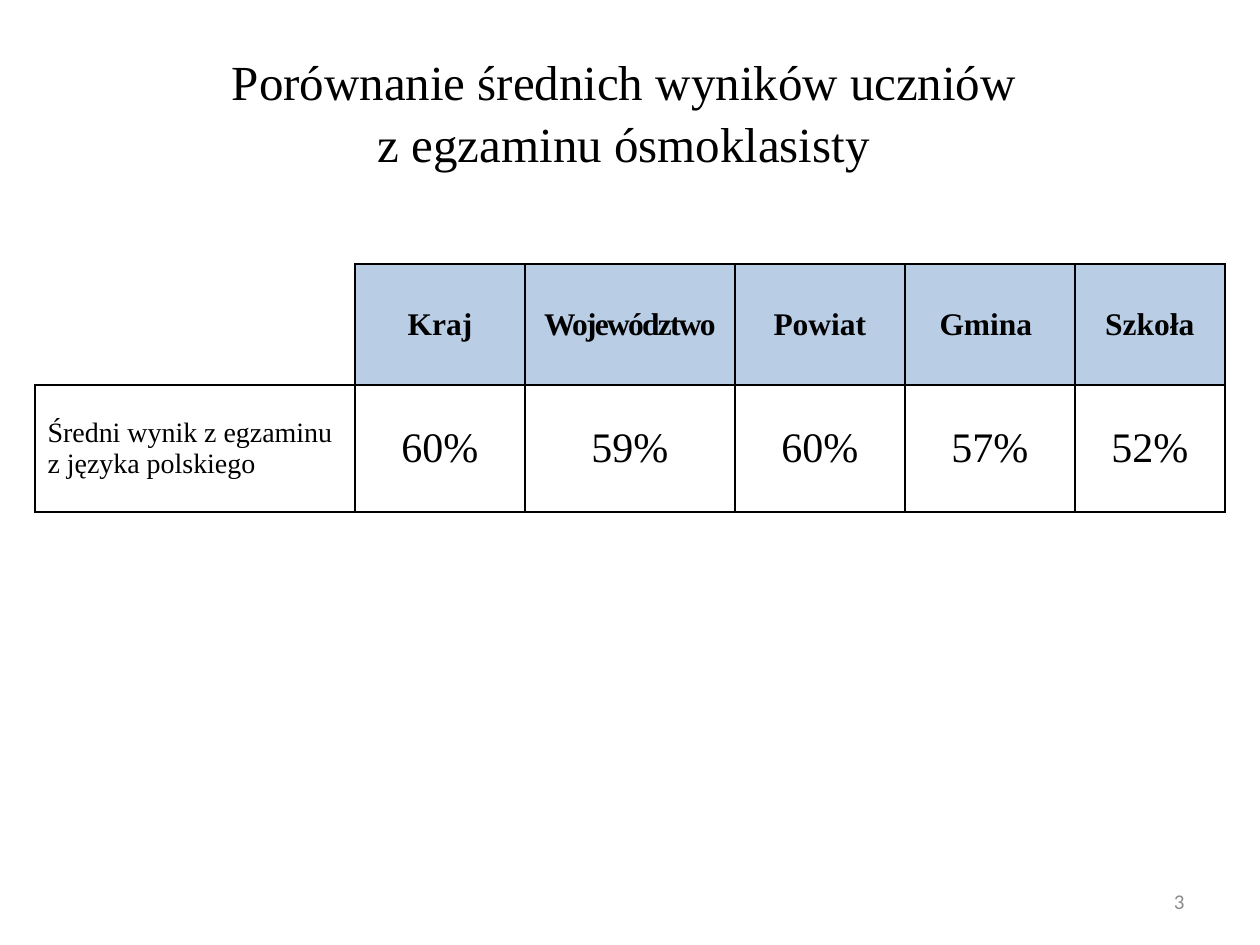
import pptx
import pptx.util
import pptx.dml.color
import pptx.enum.text
import pptx.oxml
import pptx.oxml.ns

PX = 914400 // 126
COLORS = {"text": "000000", "header": "B9CDE5", "border": "000000", "number": "8C8C8C"}
ALIGN = pptx.enum.text.PP_ALIGN
MIDDLE = pptx.enum.text.MSO_ANCHOR.MIDDLE


def write(paragraph, text, size, align, color="text", font="Times New Roman", bold=False):
    paragraph.alignment = align
    run = paragraph.add_run()
    run.text = text
    formats = {"name": font, "size": pptx.util.Pt(size), "bold": bold}
    for attribute, value in formats.items():
        setattr(run.font, attribute, value)
    run.font.color.rgb = pptx.dml.color.RGBColor.from_string(COLORS[color])
    return run


def add_borders(cell, sides):
    properties = cell._tc.get_or_add_tcPr()
    for position, side in enumerate(sides):
        properties.insert(position, pptx.oxml.parse_xml(
            f'<a:ln{side} {pptx.oxml.ns.nsdecls("a")} w="12700"><a:solidFill>'
            f'<a:srgbClr val="{COLORS["border"]}"/></a:solidFill></a:ln{side}>'))


presentation = pptx.Presentation()
presentation.slide_width = 1260 * PX
presentation.slide_height = 945 * PX
slide = presentation.slides.add_slide(presentation.slide_layouts[5])

# Title
title = slide.shapes.title
title_box = {"left": 0, "top": 0, "width": 1260, "height": 194}
for attribute, value in title_box.items():
    setattr(title, attribute, value * PX)
title_frame = title.text_frame
margins = {"margin_left": 74, "margin_top": 49, "margin_right": 74, "margin_bottom": 25}
for attribute, value in margins.items():
    setattr(title_frame, attribute, value * PX)
title_frame.auto_size = pptx.enum.text.MSO_AUTO_SIZE.NONE
title_frame.vertical_anchor = pptx.enum.text.MSO_ANCHOR.TOP
title_frame.add_paragraph()
title_lines = ["Porównanie średnich wyników uczniów ", "z egzaminu ósmoklasisty "]
for paragraph, line in zip(title_frame.paragraphs, title_lines):
    paragraph.line_spacing = 1.05
    paragraph.space_before = pptx.util.Pt(0)
    write(paragraph, line, 28, ALIGN.CENTER)

# Results table
column_widths = [320, 170, 210, 170, 170, 150]
row_heights = [121, 127]
results_rows = [
    ["", "Kraj", "Województwo", "Powiat", "Gmina ", "Szkoła"],
    ["Średni wynik z egzaminu z języka polskiego", "60%", "59%", "60%", "57%", "52%"],
]
results = slide.shapes.add_table(
    2, 6, 35 * PX, 264 * PX, sum(column_widths) * PX, sum(row_heights) * PX).table
results.first_row = results.horz_banding = False
for column, width in zip(results.columns, column_widths):
    column.width = width * PX
for row, height in zip(results.rows, row_heights):
    row.height = height * PX

for row_index, values in enumerate(results_rows):
    for column_index, value in enumerate(values):
        cell = results.cell(row_index, column_index)
        cell.vertical_anchor = MIDDLE
        is_header = row_index == 0
        if is_header and value:
            cell.fill.solid()
            cell.fill.fore_color.rgb = pptx.dml.color.RGBColor.from_string(COLORS["header"])
        else:
            cell.fill.background()
        add_borders(cell, "LRTB" if value else "RB")
        if not value:
            continue
        is_label = column_index == 0
        size = 18 if is_header else 16 if is_label else 24
        run = write(cell.text_frame.paragraphs[0], value, size,
                    ALIGN.LEFT if is_label else ALIGN.CENTER, bold=is_header)
        if value == "Województwo":
            run.font._element.set("spc", "-100")

# Slide number
number_box = slide.shapes.add_textbox(903 * PX, 876 * PX, 294 * PX, 50 * PX)
number_box.text_frame.word_wrap = True
number_box.text_frame.vertical_anchor = MIDDLE
write(number_box.text_frame.paragraphs[0], "3", 12, ALIGN.RIGHT, "number", "Calibri")

presentation.save("out.pptx")
